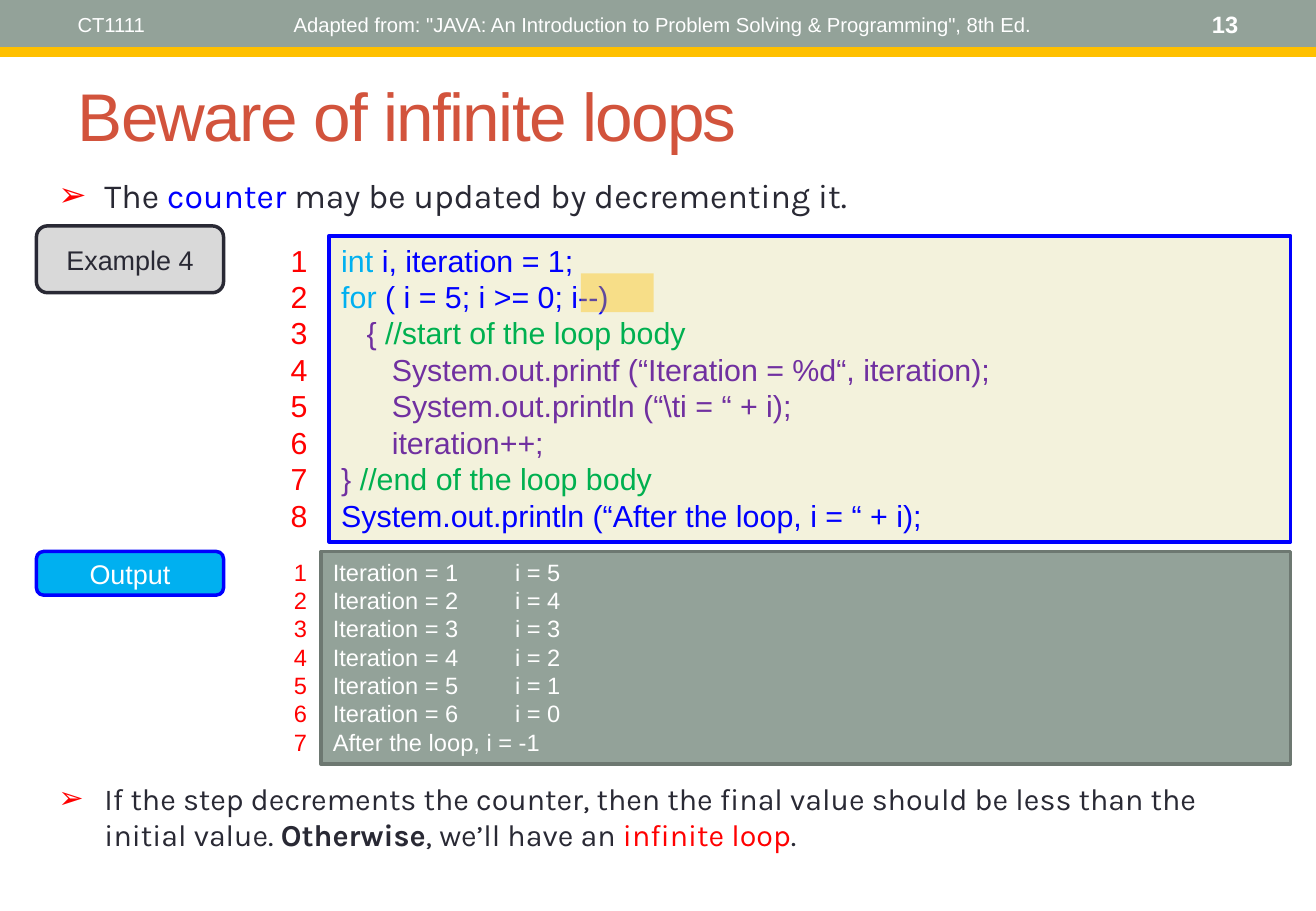
from dataclasses import dataclass
from lxml import etree
from pptx import Presentation
from pptx.dml.color import RGBColor
from pptx.enum.shapes import MSO_CONNECTOR, MSO_SHAPE
from pptx.enum.text import MSO_ANCHOR, MSO_AUTO_SIZE, PP_ALIGN
from pptx.oxml.ns import qn
from pptx.util import Inches, Pt

RECT, ROUND = MSO_SHAPE.RECTANGLE, MSO_SHAPE.ROUNDED_RECTANGLE
LINE = MSO_CONNECTOR.STRAIGHT
TOP, MID = MSO_ANCHOR.TOP, MSO_ANCHOR.MIDDLE
LEFT, CENTER, RIGHT = PP_ALIGN.LEFT, PP_ALIGN.CENTER, PP_ALIGN.RIGHT
FIXED = MSO_AUTO_SIZE.NONE


@dataclass(frozen=True)
class Theme:
    """Colours, fonts and type sizes of the slide."""
    sans: str = "Arial"
    body: str = "Karla"
    ink: str = "292934"
    white: str = "FFFFFF"
    sage: str = "93A299"
    moss: str = "6D7871"
    gold: str = "FFC000"
    rust: str = "D2533C"
    blue: str = "0000FF"
    sky: str = "00B0F0"
    plum: str = "7030A0"
    green: str = "00B050"
    red: str = "FF0000"
    cream: str = "F3F2DC"
    gray: str = "D9D9D9"
    title: int = 40
    lead: int = 20
    code: int = 18
    tag: int = 16
    out: int = 14
    small: int = 12


T = Theme()

CODE = [
    [("int ", T.sky), ("i, iteration = 1;", T.blue)],
    [("for ", T.sky), ("( i = 5; i >= 0; i--)", T.blue)],
    [("   { ", T.plum), ("//start of the loop body", T.green)],
    [("      System.out.printf (“Iteration = %d“, iteration);", T.plum)],
    [("      System.out.println (“\\ti = “ + i);", T.plum)],
    [("      iteration++;", T.plum)],
    [("} ", T.plum), ("//end of the loop body", T.green)],
    [("System.out.println (“After the loop, i = “ + i);", T.blue)],
]
OUTPUT = [f"Iteration = {n}\ti = {6 - n}" for n in range(1, 7)]
OUTPUT.append("After the loop, i = -1")
LEAD = [("The ", T.ink), ("counter ", T.blue),
        ("may be updated by decrementing it.", T.ink)]
CLOSE = [
    ("If the step decrements the counter, then the final value should be "
     "less than the initial value. ", T.ink),
    ("Otherwise", T.ink, True), (", we’ll have an ", T.ink),
    ("infinite loop", T.red), (".", T.ink),
]


def rgb(code):
    """Turn a hex code into a colour."""
    return RGBColor.from_string(code)


def place(item, box):
    """Move an item to a box given in inches."""
    item.left, item.top, item.width, item.height = map(Inches, box)


def write(frame, lines, size, color, align=LEFT, anchor=TOP, face=T.sans, bold=False):
    """Fill a frame with lines, each a string or a list of coloured runs."""
    frame.word_wrap = True
    frame.auto_size = FIXED
    frame.vertical_anchor = anchor
    for i, line in enumerate(lines):
        para = frame.paragraphs[0] if i == 0 else frame.add_paragraph()
        para.alignment = align
        para.space_before = Pt(0)
        font = para.font
        font.name, font.size, font.bold = face, Pt(size), bold
        font.color.rgb = rgb(color)
        if isinstance(line, str):
            para.add_run().text = line
            continue
        for words, tint, *strong in line:
            run = para.add_run()
            run.text = words
            run.font.color.rgb = rgb(tint)
            if strong:
                run.font.bold = True


def label(slide, box, lines, size, color, **style):
    """Add a text box."""
    item = slide.shapes.add_textbox(*map(Inches, box))
    write(item.text_frame, lines, size, color, **style)


def block(slide, kind, box, fill, edge=None, width=2.08):
    """Add a filled shape, outlined when an edge colour is given."""
    item = slide.shapes.add_shape(kind, *map(Inches, box))
    item.shadow.inherit = False
    item.fill.solid()
    item.fill.fore_color.rgb = rgb(fill)
    if edge:
        item.line.color.rgb = rgb(edge)
        item.line.width = Pt(width)
    else:
        item.line.fill.background()
    return item


def header(slide, box):
    """Draw the top band, its gold rule and its three labels."""
    x, y, w, h = box
    block(slide, RECT, box, T.sage)
    ends = (x, y + h + 0.03, x + w, y + h + 0.03)
    rule = slide.shapes.add_connector(LINE, *map(Inches, ends))
    rule.line.color.rgb = rgb(T.gold)
    rule.line.width = Pt(6)
    etree.SubElement(rule._element.spPr, qn("a:effectLst"))
    for dx, wide, words, size, align, bold in (
        (0.54, 3.43, "CT1111", T.small, LEFT, False),
        (1.97, 6.97, 'Adapted from: "JAVA: An Introduction to Problem Solving '
         '& Programming", 8th Ed.', T.small, CENTER, False),
        (9.03, 1.26, "13", T.out, RIGHT, True),
    ):
        label(slide, (x + dx, y + 0.02, wide, h - 0.04), [words], size, T.white,
              align=align, anchor=MID, bold=bold)


def heading(slide, box):
    """Set the slide title."""
    item = slide.shapes.title
    place(item, box)
    write(item.text_frame, ["Beware of infinite loops"], T.title, T.rust, anchor=MID)
    run = item.text_frame.paragraphs[0].runs[0]
    run._r.get_or_add_rPr().set("spc", "-100")


def point(item, box, runs, size):
    """Set one arrow-bulleted statement in a body placeholder."""
    place(item, box)
    para = item.text_frame.paragraphs[0]
    props = para._p.get_or_add_pPr()
    props.set("marL", str(Inches(0.38)))
    props.set("indent", str(Inches(-0.38)))
    tint = etree.SubElement(props, qn("a:buClr"))
    etree.SubElement(tint, qn("a:srgbClr"), val=T.red)
    etree.SubElement(props, qn("a:buFont"), typeface=T.sans)
    etree.SubElement(props, qn("a:buChar"), char="➢")
    write(item.text_frame, [runs], size, T.ink, face=T.body)


def tag(slide, box, words, fill, edge, color):
    """Draw a rounded caption."""
    item = block(slide, ROUND, box, fill, edge)
    write(item.text_frame, [words], T.tag, color, align=CENTER, anchor=MID)


def panel(slide, box, lines, size, color, fill, edge, width, gutter):
    """Draw a listing with its line numbers to the left."""
    x, y, w, h = box
    shift, wide, align = gutter
    item = block(slide, RECT, box, fill, edge, width)
    write(item.text_frame, lines, size, color)
    count = [str(n) for n in range(1, len(lines) + 1)]
    label(slide, (x - shift, y, wide, h), count, size, T.red, align=align)


def mark(slide, box):
    """Highlight the counter update with a clear tint."""
    item = block(slide, RECT, box, T.gold)
    tint = item._element.spPr.find(qn("a:solidFill"))[0]
    etree.SubElement(tint, qn("a:alpha"), val="38000")


def main():
    """Build and save the slide."""
    deck = Presentation()
    deck.slide_width, deck.slide_height = Inches(10.83), Inches(7.5)
    slide = deck.slides.add_slide(deck.slide_layouts[3])
    header(slide, (0, 0, 10.83, 0.4))
    heading(slide, (0.54, 0.4, 9.75, 1.08))
    lead, close = slide.placeholders[1], slide.placeholders[2]
    point(lead, (0.38, 1.39, 10.24, 0.44), LEAD, T.lead)
    panel(slide, (2.71, 1.94, 7.91, 2.52), CODE, T.code, T.plum, T.cream, T.blue,
          2.25, (0.71, 0.63, RIGHT))
    mark(slide, (4.78, 2.25, 0.6, 0.32))
    tag(slide, (0.3, 1.86, 1.54, 0.55), "Example 4", T.gray, T.ink, T.ink)
    panel(slide, (2.64, 4.54, 7.98, 1.75), OUTPUT, T.out, T.white, T.sage, T.moss,
          2.08, (0.32, 0.24, LEFT))
    tag(slide, (0.3, 4.54, 1.54, 0.36), "Output", T.sky, T.blue, T.white)
    point(close, (0.38, 6.37, 10.24, 0.71), CLOSE, T.code)
    close.fill.solid()
    close.fill.fore_color.rgb = rgb(T.white)
    deck.save("out.pptx")


if __name__ == "__main__":
    main()
